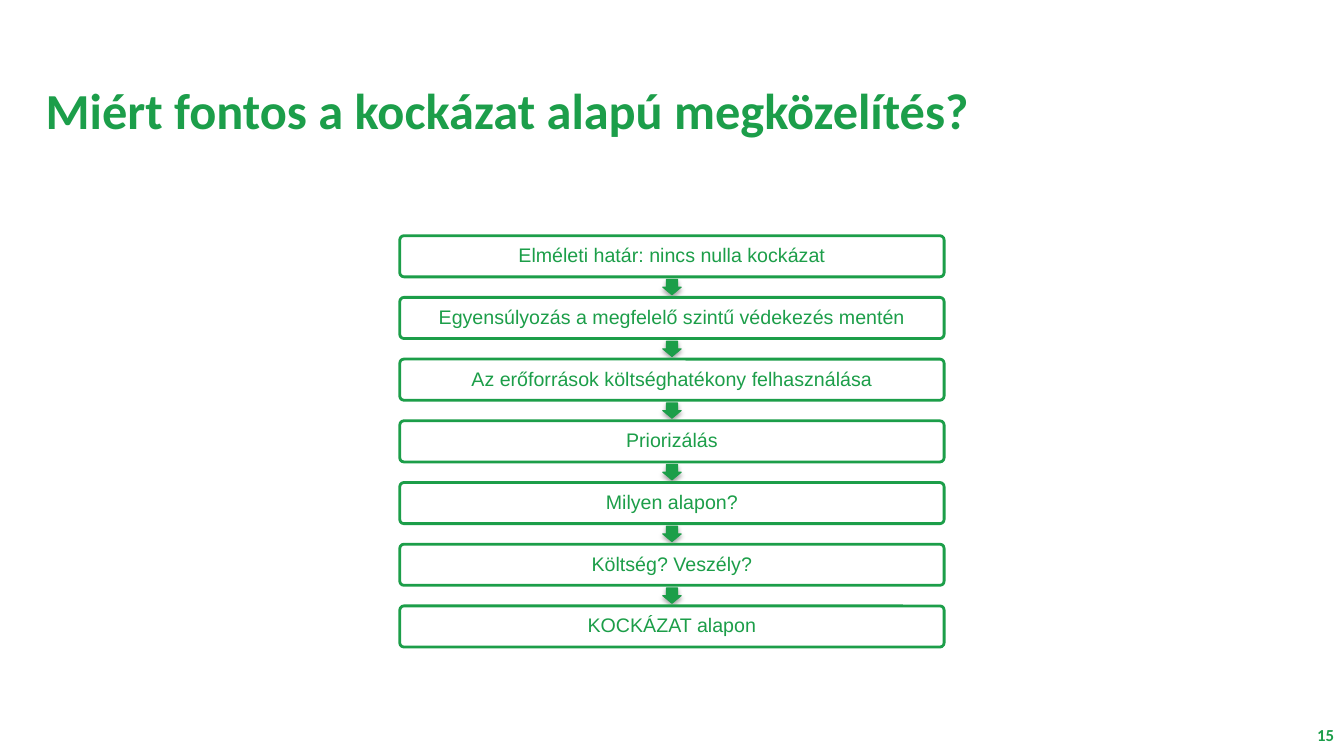
from lxml import etree
from pptx import Presentation
from pptx.dml.color import RGBColor
from pptx.enum import shapes, text
from pptx.oxml import ns
from pptx.util import Pt

HUES = {"title": "1C9E4A", "flow": "1C9E49", "box": "FFFFFF", "shade": "000000"}
STEPS = [
    "Elméleti határ: nincs nulla kockázat",
    "Egyensúlyozás a megfelelő szintű védekezés mentén",
    "Az erőforrások költséghatékony felhasználása",
    "Priorizálás",
    "Milyen alapon?",
    "Költség? Veszély?",
    "KOCKÁZAT alapon",
]


def hue(name):
    return RGBColor.from_string(HUES[name])


def write(frame, words, size, face, tint, align, bold=False, space=None):
    frame.text = words
    frame.word_wrap = True
    frame.auto_size = text.MSO_AUTO_SIZE.NONE
    frame.vertical_anchor = text.MSO_ANCHOR.MIDDLE
    para = frame.paragraphs[0]
    para.alignment = align
    para.line_spacing = space
    font = para.runs[0].font
    font.size, font.name, font.bold = Pt(size), face, bold
    font.color.rgb = hue(tint)


def paint(shape, fill, width):
    shape.shadow.inherit = False
    shape.fill.solid()
    shape.fill.fore_color.rgb = hue(fill)
    shape.line.color.rgb = hue("flow")
    shape.line.width = Pt(width)


def shade(shape):
    """Give the shape a soft shadow that falls straight down."""
    effects = shape._element.spPr.find(ns.qn("a:effectLst"))
    outer = etree.SubElement(
        effects, ns.qn("a:outerShdw"), blurRad=str(Pt(3.1)),
        dist=str(Pt(1.8)), dir="5400000", rotWithShape="0")
    color = etree.SubElement(outer, ns.qn("a:srgbClr"), val=HUES["shade"])
    etree.SubElement(color, ns.qn("a:alpha"), val="35000")


def add_title(slide, left, top, width, height):
    title = slide.shapes.title
    title.left, title.top = Pt(left), Pt(top)
    title.width, title.height = Pt(width), Pt(height)
    write(title.text_frame, "Miért fontos a kockázat alapú megközelítés?",
          36, "Calibri", "title", text.PP_ALIGN.LEFT, True, 0.9)


def add_step(slide, words, left, top, width, height):
    box = slide.shapes.add_shape(
        shapes.MSO_SHAPE.ROUNDED_RECTANGLE,
        Pt(left), Pt(top), Pt(width), Pt(height))
    box.adjustments[0] = 0.1
    paint(box, "box", 2)
    frame = box.text_frame
    frame.margin_left = frame.margin_right = Pt(4.3)
    frame.margin_top = frame.margin_bottom = Pt(4.3)
    write(frame, words, 14, "Arial", "flow", text.PP_ALIGN.CENTER, space=0.9)


def add_arrow(slide, mid_x, mid_y, length=11, breadth=13.2):
    arrow = slide.shapes.add_shape(
        shapes.MSO_SHAPE.RIGHT_ARROW, Pt(mid_x - length / 2),
        Pt(mid_y - breadth / 2), Pt(length), Pt(breadth))
    arrow.rotation = 90
    arrow.adjustments[0], arrow.adjustments[1] = 0.6, 0.5
    paint(arrow, "flow", 0.75)
    shade(arrow)


def add_flow(slide, left, top, width, height):
    """Stack the steps in the box, each gap half a step high."""
    tall = height / (1.5 * len(STEPS) - 0.5)
    gap = tall / 2
    for row, words in enumerate(STEPS):
        y = top + row * (tall + gap)
        if row:
            add_arrow(slide, left + width / 2, y - gap / 2)
        add_step(slide, words, left, y, width, tall)


def add_number(slide, left, top, width, height):
    box = slide.shapes.add_textbox(Pt(left), Pt(top), Pt(width), Pt(height))
    write(box.text_frame, "15", 12, "Calibri", "title",
          text.PP_ALIGN.RIGHT, True)


def main():
    deck = Presentation()
    deck.slide_width, deck.slide_height = Pt(960), Pt(540)
    slide = deck.slides.add_slide(deck.slide_layouts[5])
    add_number(slide, 920, 510.5, 40, 28.8)
    add_title(slide, 25.4, 28.8, 910, 104.4)
    add_flow(slide, 285.6, 168.4, 388.8, 293.8)
    deck.save("out.pptx")


if __name__ == "__main__":
    main()
